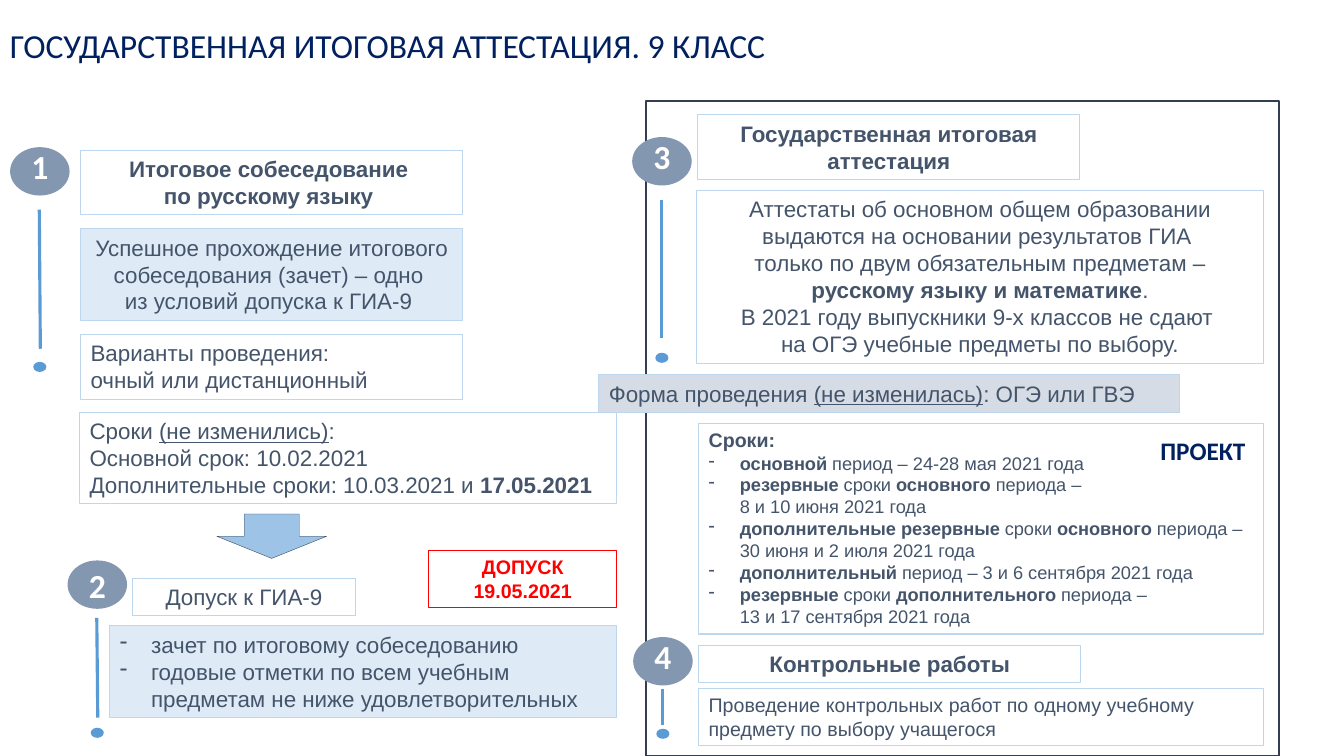
"""Build the slide about the grade 9 state final certification."""
from lxml.etree import SubElement
from pptx import Presentation
from pptx.dml.color import RGBColor
from pptx.enum.shapes import MSO_CONNECTOR, MSO_SHAPE as SHAPE
from pptx.enum.text import MSO_ANCHOR as ANCHOR, PP_ALIGN as ALIGN
from pptx.oxml.ns import qn

PX = 9144
SLIDE_SIZE = (1333, 750)
NAVY, SLATE, RED, WHITE = "002060", "44546A", "FF0000", "FFFFFF"
BLUE, PALE_BLUE, EDGE, DARK = "5B9BD5", "DEEBF7", "BDD7EE", "333F50"
BADGE, GREY, ARROW = "8497B0", "D6DCE5", "9DC3E6"
BADGE_SIZE, DOT_SIZE = (59, 48), (13, 10)
BULLET_INDENT = 31

# In texts, * switches bold and _ switches underline; a leading "- " makes a bullet.
CENTERED = {"alignment": ALIGN.CENTER}
BOXES = [
    ((80, 149, 379, 64), ["*Итоговое собеседование \nпо русскому языку *"], CENTERED),
    ((80, 227, 379, 91), ["Успешное прохождение итогового собеседования (зачет) – одно \n"
                          "из условий допуска к ГИА-9 "], {"fill": PALE_BLUE, **CENTERED}),
    ((80, 332, 379, 64), ["Варианты проведения:", "очный или дистанционный"], {}),
    ((79, 409, 532, 91), ["Сроки _(не изменились)_:", "Основной срок: 10.02.2021",
                          "Дополнительные сроки: 10.03.2021 и *17.05.2021*"], {}),
    ((131, 574, 222, 37), ["Допуск к ГИА-9"], CENTERED),
    ((425, 546, 187, 57), ["*ДОПУСК 19.05.2021*"],
     {"line": RED, "color": RED, "sizes": (14,), **CENTERED}),
    ((109, 621, 503, 91), ["- зачет по итоговому собеседованию",
                           "- годовые отметки по всем учебным предметам "
                           "не ниже удовлетворительных"], {"fill": PALE_BLUE}),
    ((692, 114, 379, 64), ["*Государственная итоговая аттестация*"], CENTERED),
    ((691, 189, 562, 172), ["Аттестаты об основном общем образовании выдаются "
                            "на основании результатов ГИА \nтолько по двум обязательным "
                            "предметам – *русскому языку и математике*.",
                            "В 2021 году выпускники 9-х классов не сдают \n"
                            "на ОГЭ учебные предметы по выбору."], CENTERED),
    ((594, 372, 576, 37), ["Форма проведения _(не изменилась)_: ОГЭ или ГВЭ"], {"fill": GREY}),
    ((693, 420, 560, 209), ["*Сроки:*",
                            "- *основной* период – 24-28 мая 2021 года",
                            "- *резервные* сроки *основного* периода – \n8 и 10 июня 2021 года",
                            "- *дополнительные резервные* сроки *основного* периода – "
                            "30 июня и 2 июля 2021 года",
                            "- *дополнительный* период – 3 и 6 сентября 2021 года",
                            "- *резервные* сроки *дополнительного* периода – \n"
                            "13 и 17 сентября 2021 года"], {"sizes": (14, 13)}),
    ((693, 640, 379, 37), ["*Контрольные работы*"], CENTERED),
    ((693, 683, 560, 57), ["Проведение контрольных работ по одному учебному предмету "
                           "по выбору учащегося"], {"sizes": (14,)}),
]
HEADINGS = [
    ((0, 22, 872, 51), ["ГОСУДАРСТВЕННАЯ ИТОГОВАЯ АТТЕСТАЦИЯ. 9 КЛАСС"],
     {"sizes": (24,), "line_spacing": 0.9}),
    ((1134, 427, 111, 40), ["*ПРОЕКТ*"], {"sizes": (18,), "alignment": ALIGN.RIGHT}),
]
STEPS = [
    {"number": "1", "at": (10, 146), "line": (208, 346), "lean": 1, "dot": 359, "spacing": 0.7},
    {"number": "2", "at": (67, 556), "line": (613, 712), "lean": 1, "dot": 722, "spacing": 1.0},
    {"number": "3", "at": (627, 136), "line": (198, 335), "lean": 0, "dot": 350, "spacing": 0.7},
    {"number": "4", "at": (628, 632), "line": (684, 719), "lean": 0, "dot": 723, "spacing": 0.7},
]


def rgb(color):
    """Turn a hex string into a colour."""
    return RGBColor.from_string(color)


def emu(lengths):
    """Turn pixel lengths into EMU."""
    return [length * PX for length in lengths]


def set_all(target, values):
    """Set every attribute named in a dict."""
    for name, value in values.items():
        setattr(target, name, value)


def add_runs(paragraph, text, font_values, color):
    """Add the runs of one marked-up paragraph."""
    for bold_index, bold_part in enumerate(text.split("*")):
        for underline_index, part in enumerate(bold_part.split("_")):
            for line_index, words in enumerate(part.split("\n")):
                if line_index:
                    paragraph.add_line_break()
                if words:
                    run = paragraph.add_run()
                    run.text = words
                    set_all(run.font, {**font_values, "bold": bold_index % 2 == 1,
                                       "underline": underline_index % 2 == 1})
                    run.font.color.rgb = rgb(color)


def write(shape, texts, font="Arial", color=SLATE, sizes=(16,), anchor=ANCHOR.TOP,
          alignment=ALIGN.LEFT, line_spacing=1.0, margins=(10, 5)):
    """Fill a shape with paragraphs; the last size serves all later ones."""
    frame = shape.text_frame
    side, end = emu(margins)
    set_all(frame, {"word_wrap": True, "vertical_anchor": anchor, "margin_left": side,
                    "margin_right": side, "margin_top": end, "margin_bottom": end})
    for index, text in enumerate(texts):
        paragraph = frame.add_paragraph() if index else frame.paragraphs[0]
        set_all(paragraph, {"alignment": alignment, "line_spacing": line_spacing})
        if text.startswith("- "):
            properties = paragraph._p.get_or_add_pPr()
            properties.set("marL", str(BULLET_INDENT * PX))
            properties.set("indent", str(-BULLET_INDENT * PX))
            SubElement(properties, qn("a:buChar")).set("char", "-")
        size = sizes[min(index, len(sizes) - 1)]
        add_runs(paragraph, text.removeprefix("- "), {"name": font, "size": size * 12700}, color)


def add_shape(slide, kind, place, fill=None, line=None, width=0.75):
    """Add a flat shape with optional fill and outline."""
    shape = slide.shapes.add_shape(kind, *emu(place))
    shape.shadow.inherit = False
    if fill:
        shape.fill.solid()
        shape.fill.fore_color.rgb = rgb(fill)
    else:
        shape.fill.background()
    if line:
        shape.line.color.rgb = rgb(line)
        shape.line.width = int(width * 12700)
    else:
        shape.line.fill.background()
    return shape


def add_step(slide, step):
    """Add a numbered badge with its line and dot."""
    left, top = step["at"]
    badge = add_shape(slide, SHAPE.OVAL, (left, top, *BADGE_SIZE), BADGE)
    write(badge, [f"*{step['number']}*"], "Calibri", WHITE, (24,), ANCHOR.MIDDLE,
          ALIGN.CENTER, step["spacing"], (0, 0))
    middle = left + BADGE_SIZE[0] // 2
    start, end = step["line"]
    line = slide.shapes.add_connector(
        MSO_CONNECTOR.STRAIGHT, *emu((middle, start, middle + step["lean"], end)))
    line.line.color.rgb = rgb(BLUE)
    line.line.width = int(2.25 * 12700)
    SubElement(line._element.spPr, qn("a:effectLst"))
    add_shape(slide, SHAPE.OVAL, (middle - DOT_SIZE[0] // 2, step["dot"], *DOT_SIZE), BLUE)


def main():
    """Build and save the presentation."""
    presentation = Presentation()
    presentation.slide_width, presentation.slide_height = emu(SLIDE_SIZE)
    slide = presentation.slides.add_slide(presentation.slide_layouts[6])
    add_shape(slide, SHAPE.RECTANGLE, (641, 100, 628, 650), line=DARK, width=1.5)
    for place, texts, values in HEADINGS:
        heading = slide.shapes.add_textbox(*emu(place))
        write(heading, texts, "Calibri", NAVY, anchor=ANCHOR.MIDDLE, **values)
    for place, texts, values in BOXES:
        style = {"line": EDGE, "fill": None, **values}
        box = add_shape(slide, SHAPE.RECTANGLE, place, style.pop("fill"), style.pop("line"))
        write(box, texts, **style)
    add_shape(slide, SHAPE.DOWN_ARROW, (215, 510, 109, 44), ARROW, DARK, 0.25)
    for step in STEPS:
        add_step(slide, step)
    presentation.save("out.pptx")


if __name__ == "__main__":
    main()
